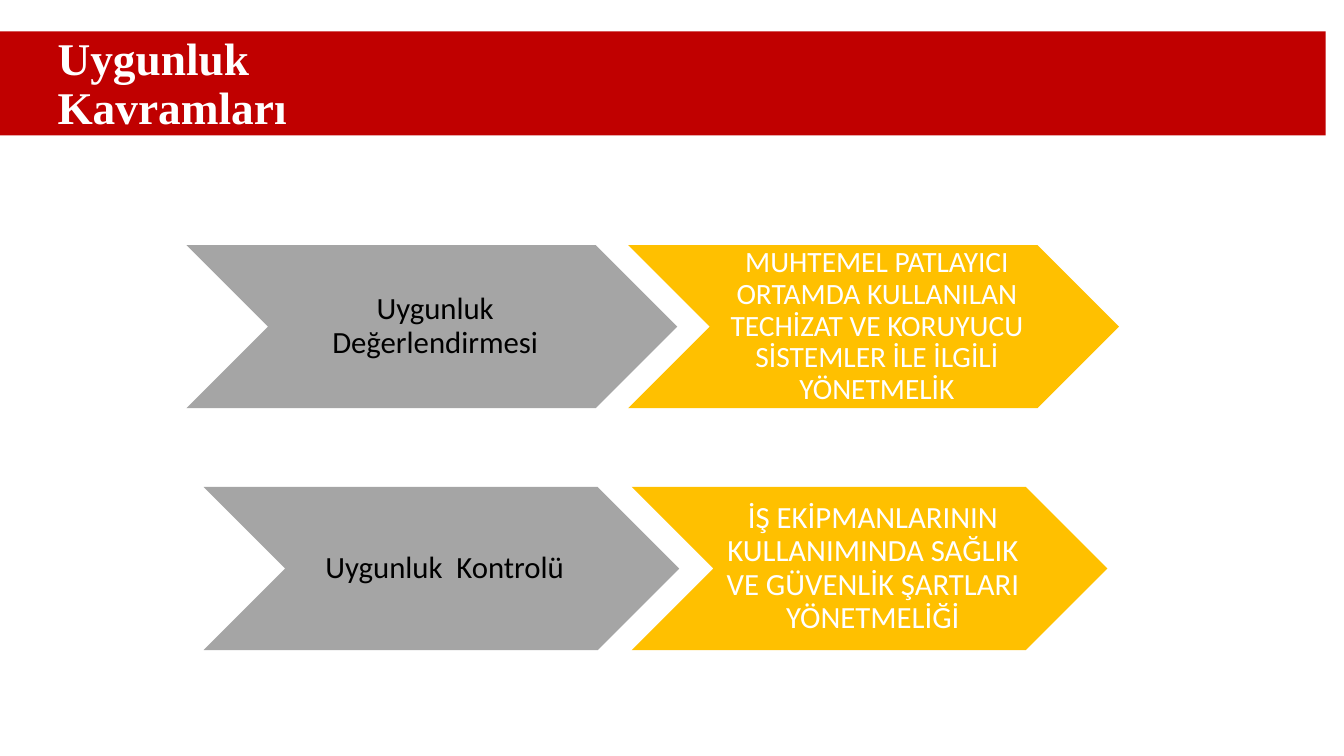
from pptx import Presentation
from pptx.dml.color import RGBColor
from pptx.enum.shapes import MSO_SHAPE
from pptx.enum.text import MSO_ANCHOR, PP_ALIGN
from pptx.util import Pt

RECTANGLE, CHEVRON = MSO_SHAPE.RECTANGLE, MSO_SHAPE.CHEVRON
MIDDLE = MSO_ANCHOR.MIDDLE
LEFT, CENTER = PP_ALIGN.LEFT, PP_ALIGN.CENTER

RED = RGBColor(0xC0, 0x00, 0x00)
GRAY = RGBColor(0xA5, 0xA5, 0xA5)
AMBER = RGBColor(0xFF, 0xC0, 0x00)
BLACK = RGBColor(0x00, 0x00, 0x00)
WHITE = RGBColor(0xFF, 0xFF, 0xFF)

PAGE_WIDTH, PAGE_HEIGHT = 960, 540
CHEVRON_STEP = 0.9

ROWS = [
    ((133.2, 175, 350.6, 116.6), [
        ("Uygunluk Değerlendirmesi", 22),
        ("MUHTEMEL PATLAYICI ORTAMDA KULLANILAN TECHİZAT VE KORUYUCU "
         "SİSTEMLER İLE İLGİLİ YÖNETMELİK", 21),
    ]),
    ((145.4, 347.8, 339.8, 116.6), [
        ("Uygunluk  Kontrolü", 22),
        ("İŞ EKİPMANLARININ KULLANIMINDA SAĞLIK VE GÜVENLİK ŞARTLARI "
         "YÖNETMELİĞİ", 22),
    ]),
]


def add_block(page, kind, box, color):
    block = page.shapes.add_shape(kind, *map(Pt, box))
    block.shadow.inherit = False
    block.fill.solid()
    block.fill.fore_color.rgb = color
    block.line.fill.background()
    return block


def write_text(shape, text, margins, align, color, font):
    frame = shape.text_frame
    frame.word_wrap = True
    frame.vertical_anchor = MIDDLE
    for side, margin in zip(("left", "top", "right", "bottom"), margins):
        setattr(frame, f"margin_{side}", Pt(margin))
    para = frame.paragraphs[0]
    para.alignment = align
    para.line_spacing = 0.9
    span = para.add_run()
    span.text = text
    for name, value in font.items():
        setattr(span.font, name, value)
    span.font.color.rgb = color


def add_header(page, box):
    left, top, width, height = box
    add_block(page, RECTANGLE, box, RED)
    title = page.shapes.add_textbox(
        Pt(left + 47), Pt(top + 1.5), Pt(308.9), Pt(height))
    write_text(title, "Uygunluk Kavramları", (7.2, 3.6, 7.2, 3.6), LEFT, WHITE,
               {"name": "Times New Roman", "size": Pt(32.4), "bold": True})


def add_chevron_row(page, box, labels):
    left, top, width, height = box
    colors = [(GRAY, BLACK), (AMBER, WHITE)]
    for index, ((text, size), (fill, ink)) in enumerate(zip(labels, colors)):
        place = (left + index * CHEVRON_STEP * width, top, width, height)
        chevron = add_block(page, CHEVRON, place, fill)
        write_text(chevron, text, (7, 2.2, 2.2, 2.2), CENTER, ink,
                   {"name": "Calibri", "size": Pt(size)})


def main():
    deck = Presentation()
    deck.slide_width, deck.slide_height = Pt(PAGE_WIDTH), Pt(PAGE_HEIGHT)
    page = deck.slides.add_slide(deck.slide_layouts[6])
    add_header(page, (-13, 22.5, PAGE_WIDTH, 74.2))
    for box, labels in ROWS:
        add_chevron_row(page, box, labels)
    deck.save("out.pptx")


if __name__ == "__main__":
    main()
